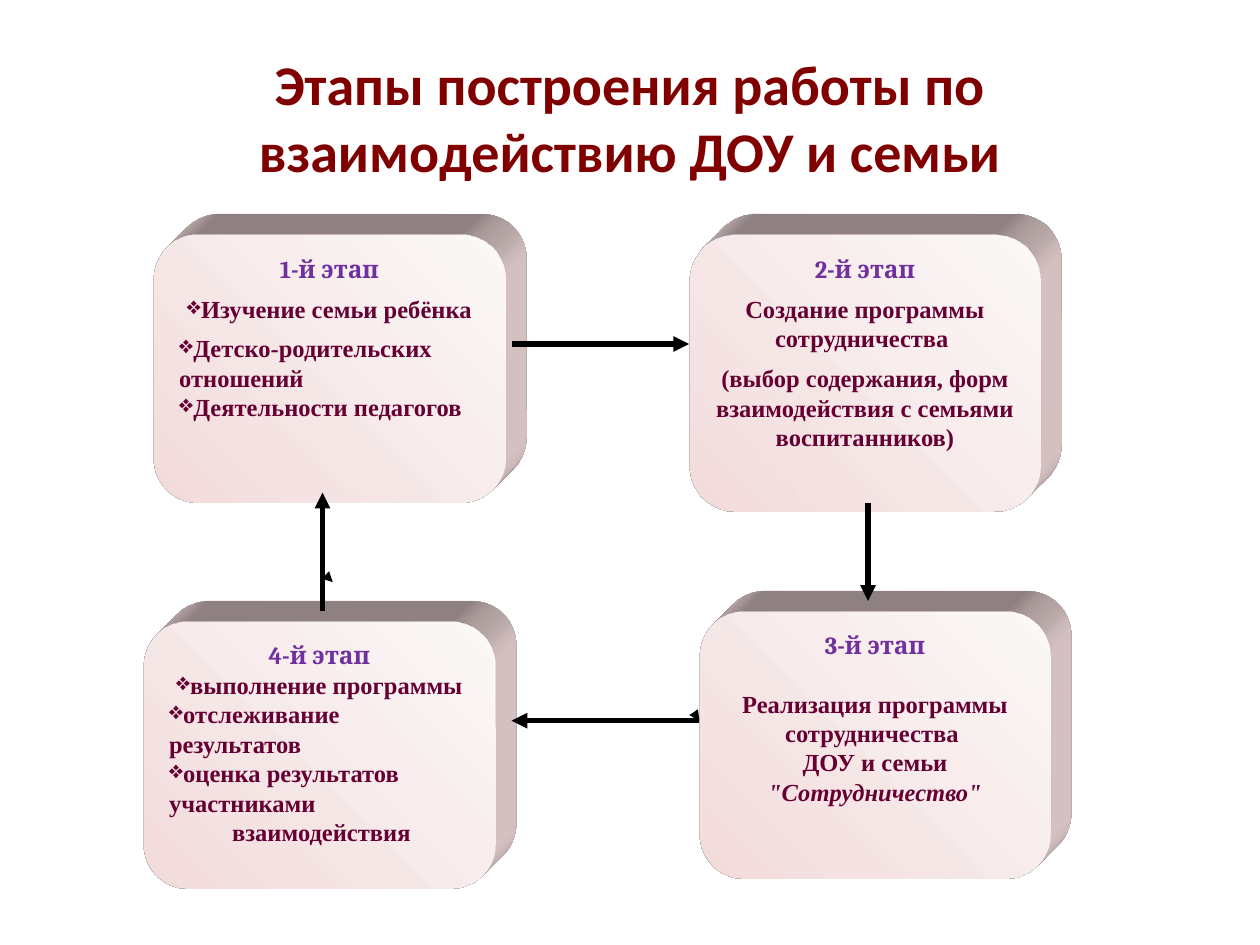
from lxml import etree
from pptx import Presentation
from pptx.dml.color import RGBColor
from pptx.enum.shapes import MSO_CONNECTOR, MSO_SHAPE
from pptx.enum.text import MSO_ANCHOR, PP_ALIGN
from pptx.oxml import parse_xml
from pptx.oxml.ns import nsdecls, qn
from pptx.util import Inches, Pt

CENTER, LEFT = PP_ALIGN.CENTER, PP_ALIGN.LEFT
MIDDLE, TOP = MSO_ANCHOR.MIDDLE, MSO_ANCHOR.TOP
ROUNDED, STRAIGHT = MSO_SHAPE.ROUNDED_RECTANGLE, MSO_CONNECTOR.STRAIGHT

# The slide is a grid of 100 columns by 75 rows of square cells
SLIDE_WIDTH, SLIDE_HEIGHT = Inches(10), Inches(7.5)
CELL = SLIDE_WIDTH / 100
CARD_WIDTH = 27.9
CORNER = 0.167
DEPTH = Inches(0.47)

COLORS = {
    "title": "800000", "stage": "7030A0", "body": "660033", "arrow": "000000",
    "face_dark": "F2DBDB", "face_light": "FCF8F8",
}

# Cards: left, top, height, heading, space after heading, paragraphs.
# A paragraph is (runs, options); a run is (text, italic).
CARDS = [
    (54.7, 18.6, 22, "2-й этап", 6, [
        ([("Создание программы сотрудничества ", False)], {"after": 6}),
        ([("(выбор содержания, форм взаимодействия с семьями воспитанников)", False)],
         {"after": 6}),
    ]),
    (55.5, 48.5, 21.2, "3-й этап", 16.5, [
        ([("Реализация программы сотрудничества ", False)], {}),
        ([("ДОУ и семьи ", False), ("\"Сотрудничество\"", True)], {}),
    ]),
    (12.2, 18.6, 21.3, "1-й этап", 6, [
        ([("Изучение семьи ребёнка", False)], {"bullet": True, "after": 6}),
        ([("Детско-родительских отношений", False)], {"bullet": True, "align": LEFT}),
        ([("Деятельности педагогов", False)], {"bullet": True, "align": LEFT}),
    ]),
    (11.4, 49.3, 21.2, "4-й этап", 0, [
        ([("выполнение программы", False)], {"bullet": True}),
        ([("отслеживание результатов", False)], {"bullet": True, "align": LEFT}),
        ([("оценка результатов участниками", False)], {"bullet": True, "align": LEFT}),
        ([("взаимодействия", False)], {"align": LEFT, "indent": 5}),
    ]),
]

# Arrows: start column, start row, end column, end row, width in points
ARROWS = [
    (40.6, 27.3, 54.7, 27.3, 3),
    (68.9, 39.9, 68.9, 47.7, 3),
    (55.5, 57.2, 55.51, 57.21, 0.75),
    (55.5, 57.2, 40.6, 57.2, 3),
    (26.4, 46.2, 26.41, 46.21, 0.75),
    (25.6, 48.5, 25.6, 39.1, 3),
]


def grid(*cells):
    return [round(cell * CELL) for cell in cells]


def color(name):
    return RGBColor.from_string(COLORS[name])


def fill_face(shape):
    shape.fill.gradient()
    shape.fill.gradient_angle = 45
    for stop, name, position in zip(shape.fill.gradient_stops,
                                    ("face_dark", "face_light"), (0, 1)):
        stop.color.rgb = color(name)
        stop.position = position
    shape.line.fill.background()
    shape.shadow.inherit = False


def extrude(shape):
    """Give the shape a solid depth towards the top right."""
    properties = shape.element.spPr
    properties.append(parse_xml(
        f'<a:scene3d {nsdecls("a")}><a:camera prst="legacyObliqueTopRight"/>'
        '<a:lightRig rig="legacyFlat3" dir="b"/></a:scene3d>'))
    properties.append(parse_xml(
        f'<a:sp3d {nsdecls("a")} extrusionH="{DEPTH}" prstMaterial="legacyMatte">'
        '<a:bevelT w="13500" h="13500" prst="angle"/>'
        '<a:bevelB w="13500" h="13500" prst="angle"/>'
        f'<a:extrusionClr><a:srgbClr val="{COLORS["face_dark"]}"/></a:extrusionClr>'
        '</a:sp3d>'))


def add_run(paragraph, text, font_name, size, color_name, italic=False):
    run = paragraph.add_run()
    run.text = text
    font = run.font
    font.name, font.size, font.bold = font_name, Pt(size), True
    font.color.rgb = color(color_name)
    if italic:
        font.italic = True


def add_bullet(paragraph):
    properties = paragraph._p.get_or_add_pPr()
    properties.set("marL", "0")
    properties.set("indent", "0")
    bullet_color = etree.SubElement(properties, qn("a:buClr"))
    etree.SubElement(bullet_color, qn("a:srgbClr"), val=COLORS["body"])
    etree.SubElement(properties, qn("a:buFont"), typeface="OpenSymbol")
    etree.SubElement(properties, qn("a:buChar"), char="❖")


def add_title(slide, text):
    box = slide.shapes.add_textbox(*grid(5, 3, 90, 12.5))
    frame = box.text_frame
    frame.word_wrap = True
    frame.vertical_anchor = MIDDLE
    paragraph = frame.paragraphs[0]
    paragraph.alignment = CENTER
    add_run(paragraph, text, "Calibri", 32, "title")


def add_card(slide, left, top, height, heading, heading_after, paragraphs):
    card = slide.shapes.add_shape(ROUNDED, *grid(left, top, CARD_WIDTH, height))
    card.adjustments[0] = CORNER
    fill_face(card)
    extrude(card)
    frame = card.text_frame
    frame.word_wrap = True
    frame.vertical_anchor = TOP
    # Heading
    paragraph = frame.paragraphs[0]
    paragraph.alignment = CENTER
    paragraph.space_after = Pt(heading_after)
    add_run(paragraph, heading, "Cambria", 14, "stage")
    # Body
    for runs, options in paragraphs:
        paragraph = frame.add_paragraph()
        paragraph.alignment = options.get("align", CENTER)
        paragraph.space_after = Pt(options.get("after", 0))
        if options.get("bullet"):
            add_bullet(paragraph)
        if "indent" in options:
            paragraph._p.get_or_add_pPr().set("marL", str(grid(options["indent"])[0]))
        for text, italic in runs:
            add_run(paragraph, text, "Times New Roman", 14, "body", italic)


def add_arrow(slide, start_x, start_y, end_x, end_y, width):
    arrow = slide.shapes.add_connector(STRAIGHT, *grid(start_x, start_y, end_x, end_y))
    arrow.line.color.rgb = color("arrow")
    arrow.line.width = Pt(width)
    etree.SubElement(arrow.line._get_or_add_ln(), qn("a:tailEnd"), type="triangle")
    etree.SubElement(arrow._element.spPr, qn("a:effectLst"))


def main():
    presentation = Presentation()
    presentation.slide_width, presentation.slide_height = SLIDE_WIDTH, SLIDE_HEIGHT
    slide = presentation.slides.add_slide(presentation.slide_layouts[6])
    add_title(slide, "Этапы построения работы по взаимодействию ДОУ и семьи")
    for card in CARDS:
        add_card(slide, *card)
    for arrow in ARROWS:
        add_arrow(slide, *arrow)
    presentation.save("out.pptx")


if __name__ == "__main__":
    main()
